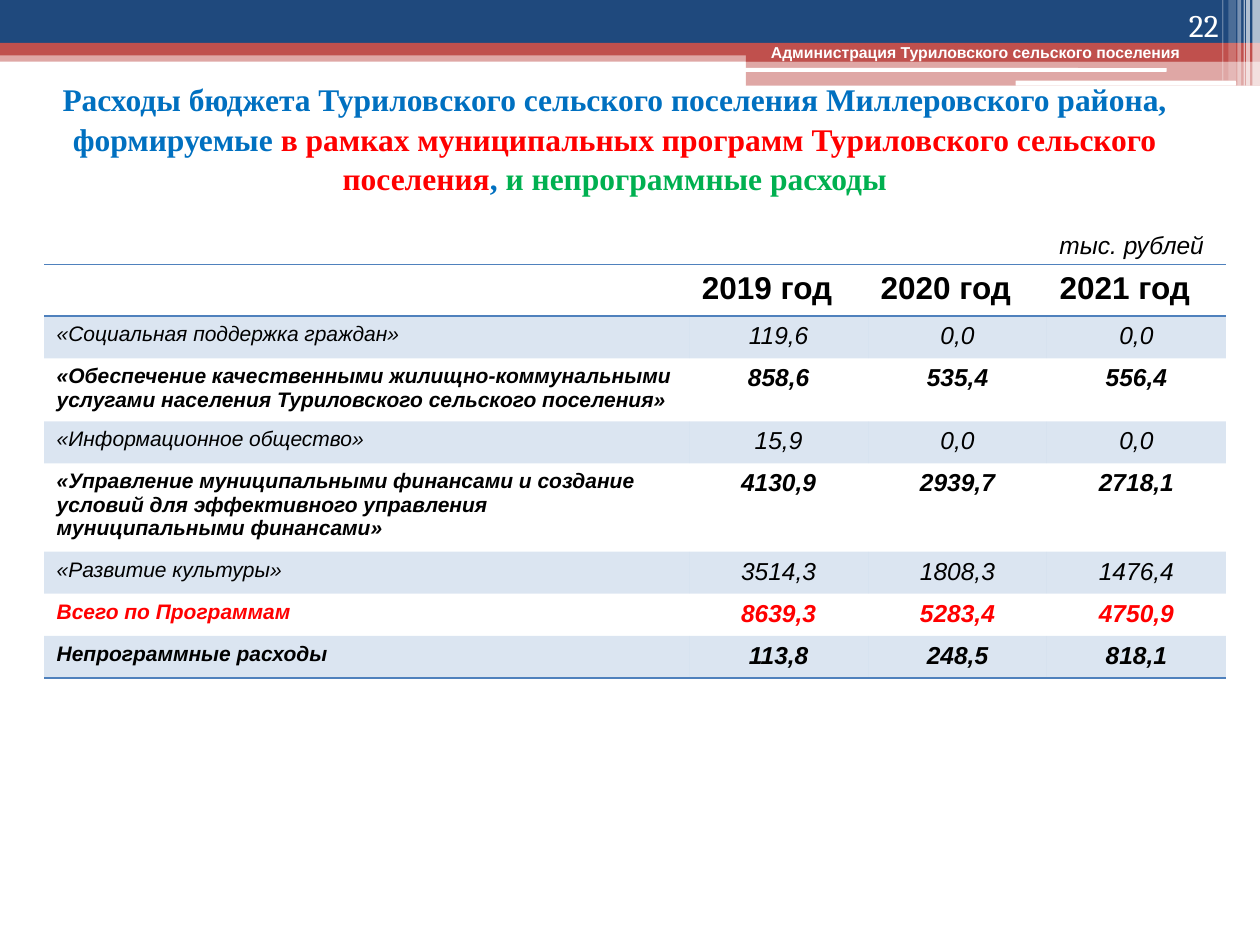
from lxml import etree
from pptx import Presentation, util as u
from pptx.dml.color import RGBColor
from pptx.enum import shapes, text
from pptx.oxml.ns import qn

COLORS = {
    "navy": "1F497D", "brick": "C0504D", "white": "FFFFFF", "black": "000000",
    "accent": "4F81BD", "blue": "0070C0", "red": "FF0000", "green": "00B050",
}
NO_STYLE_TABLE = "{2D5ABB26-0587-4C30-8999-92F81FD0307C}"
RECT = shapes.MSO_SHAPE.RECTANGLE
ROUNDED = shapes.MSO_SHAPE.ROUNDED_RECTANGLE
ALIGN = text.PP_ALIGN

# shape, left, top, width, height, colour, opacity in percent
DECORATION = [
    (RECT, 0, 0.4, 10, 0.09, "brick", 50),
    (RECT, 0, 0, 10, 0.34, "navy", 100),
    (RECT, 0, 0.34, 10, 0.1, "brick", 100),
    (RECT, 5.92, 0.39, 4.08, 0.1, "brick", 100),
    (RECT, 5.92, 0.48, 4.08, 0.2, "brick", 50),
    (ROUNDED, 5.91, 0.54, 3.35, 0.03, "white", 100),
    (ROUNDED, 8.06, 0.64, 1.75, 0.04, "white", 100),
    (RECT, 9.94, 0, 0.06, 0.68, "white", 65),
    (RECT, 9.89, 0, 0.03, 0.68, "white", 65),
    (RECT, 9.87, 0, 0.01, 0.68, "white", 60),
    (RECT, 9.82, 0, 0.03, 0.68, "white", 40),
    (RECT, 9.75, 0, 0.06, 0.64, "white", 20),
    (RECT, 9.7, 0, 0.01, 0.64, "white", 30),
]

TITLE = [
    ("Расходы бюджета Туриловского сельского поселения Миллеровского района, "
     "формируемые ", "blue"),
    ("в рамках муниципальных программ Туриловского сельского поселения", "red"),
    (", ", "blue"),
    ("и непрограммные расходы", "green"),
]

HEADINGS = ["", "2019 год", "2020 год", "2021 год"]
# row height, bold, colour, cell texts
EXPENSES = [
    (0.32, False, "black", ["«Социальная поддержка граждан»", "119,6", "0,0", "0,0"]),
    (0.47, True, "black",
     ["«Обеспечение качественными жилищно-коммунальными услугами населения "
      "Туриловского сельского поселения»", "858,6", "535,4", "556,4"]),
    (0.32, False, "black", ["«Информационное общество»", "15,9", "0,0", "0,0"]),
    (0.66, True, "black",
     ["«Управление муниципальными финансами и создание условий для эффективного "
      "управления муниципальными финансами»", "4130,9", "2939,7", "2718,1"]),
    (0.32, False, "black", ["«Развитие культуры»", "3514,3", "1808,3", "1476,4"]),
    (0.32, True, "red", ["Всего по Программам", "8639,3", "5283,4", "4750,9"]),
    (0.32, True, "black", ["Непрограммные расходы", "113,8", "248,5", "818,1"]),
]


def inches(*lengths):
    return [u.Inches(length) for length in lengths]


def paint(fill, color, opacity=100):
    fill.solid()
    fill.fore_color.rgb = RGBColor.from_string(COLORS[color])
    if opacity < 100:
        # The public fill format offers no transparency
        tone = fill._xPr.find(".//" + qn("a:srgbClr"))
        etree.SubElement(tone, qn("a:alpha"), val=str(opacity * 1000))


def add_span(para, words, color, **formats):
    span = para.add_run()
    span.text = words
    span.font.color.rgb = RGBColor.from_string(COLORS[color])
    for name, value in formats.items():
        setattr(span.font, name, value)


def add_bar(page, kind, left, top, width, height, color, opacity):
    bar = page.shapes.add_shape(kind, *inches(left, top, width, height))
    bar.shadow.inherit = False
    bar.line.fill.background()
    paint(bar.fill, color, opacity)


def add_label(page, place, words, color, align=ALIGN.LEFT,
              anchor=text.MSO_ANCHOR.TOP, **formats):
    box = page.shapes.add_textbox(*inches(*place))
    box.text_frame.word_wrap = True
    box.text_frame.vertical_anchor = anchor
    para = box.text_frame.paragraphs[0]
    para.alignment = align
    add_span(para, words, color, **formats)


def fill_title(page):
    title = page.shapes.title
    title.left, title.top, title.width, title.height = inches(0, 0.6, 9.76, 1.26)
    frame_formats = {
        "word_wrap": True, "auto_size": text.MSO_AUTO_SIZE.NONE,
        "vertical_anchor": text.MSO_ANCHOR.TOP, "margin_top": u.Inches(0.02),
    }
    for name, value in frame_formats.items():
        setattr(title.text_frame, name, value)
    para = title.text_frame.paragraphs[0]
    para.alignment = ALIGN.CENTER
    para.line_spacing = 1.05
    for words, color in TITLE:
        add_span(para, words, color, name="Times New Roman", size=u.Pt(18), bold=True)


def add_borders(cell, *sides):
    """Draw accent lines on the given sides, in the order T, B."""
    properties = cell._tc.get_or_add_tcPr()
    for position, side in enumerate(sides):
        line = etree.Element(qn("a:ln" + side), w=str(u.Pt(1)))
        fill = etree.SubElement(line, qn("a:solidFill"))
        etree.SubElement(fill, qn("a:srgbClr"), val=COLORS["accent"])
        properties.insert(position, line)


def fill_cell(cell, words, color, banded, align=ALIGN.LEFT, **formats):
    if banded:
        paint(cell.fill, "accent", 20)
    else:
        cell.fill.background()
    if words:
        para = cell.text_frame.paragraphs[0]
        para.alignment = align
        add_span(para, words, color, name="Arial", **formats)


def add_expense_table(page):
    heights = [0.41] + [expense[0] for expense in EXPENSES]
    widths = [5.12] + [1.42] * 3
    frame = page.shapes.add_table(len(heights), len(widths),
                                  *inches(0.35, 2.1, sum(widths), sum(heights)))
    table = frame.table
    table._tbl.tblPr.find(qn("a:tableStyleId")).text = NO_STYLE_TABLE
    for column, width in zip(table.columns, widths):
        column.width = u.Inches(width)
    for row, height in zip(table.rows, heights):
        row.height = u.Inches(height)

    for cell, heading in zip(table.rows[0].cells, HEADINGS):
        fill_cell(cell, heading, "black", False, size=u.Pt(18), bold=True)
        add_borders(cell, "T", "B")
    for index, (_, bold, color, entries) in enumerate(EXPENSES):
        for column, words in enumerate(entries):
            fill_cell(table.cell(index + 1, column), words, color, index % 2 == 0,
                      align=ALIGN.CENTER if column else ALIGN.LEFT,
                      size=u.Pt(14 if column else 12), bold=bold, italic=True)
    for cell in table.rows[len(EXPENSES)].cells:
        add_borders(cell, "B")


def main():
    deck = Presentation()
    deck.slide_width, deck.slide_height = inches(10, 7.5)
    page = deck.slides.add_slide(deck.slide_layouts[5])
    for bar in DECORATION:
        add_bar(page, *bar)
    add_label(page, (6.02, 0.29, 3.54, 0.25),
              "Администрация Туриловского сельского поселения", "white",
              name="Arial", size=u.Pt(9), bold=True)
    fill_title(page)
    add_label(page, (8.94, 0, 0.83, 0.4), "22", "white", ALIGN.RIGHT,
              text.MSO_ANCHOR.BOTTOM, name="Cambria", size=u.Pt(18))
    add_expense_table(page)
    add_label(page, (8.31, 1.78, 1.42, 0.34), "тыс. рублей", "black",
              name="Arial", size=u.Pt(14), italic=True)
    deck.save("out.pptx")


if __name__ == "__main__":
    main()
